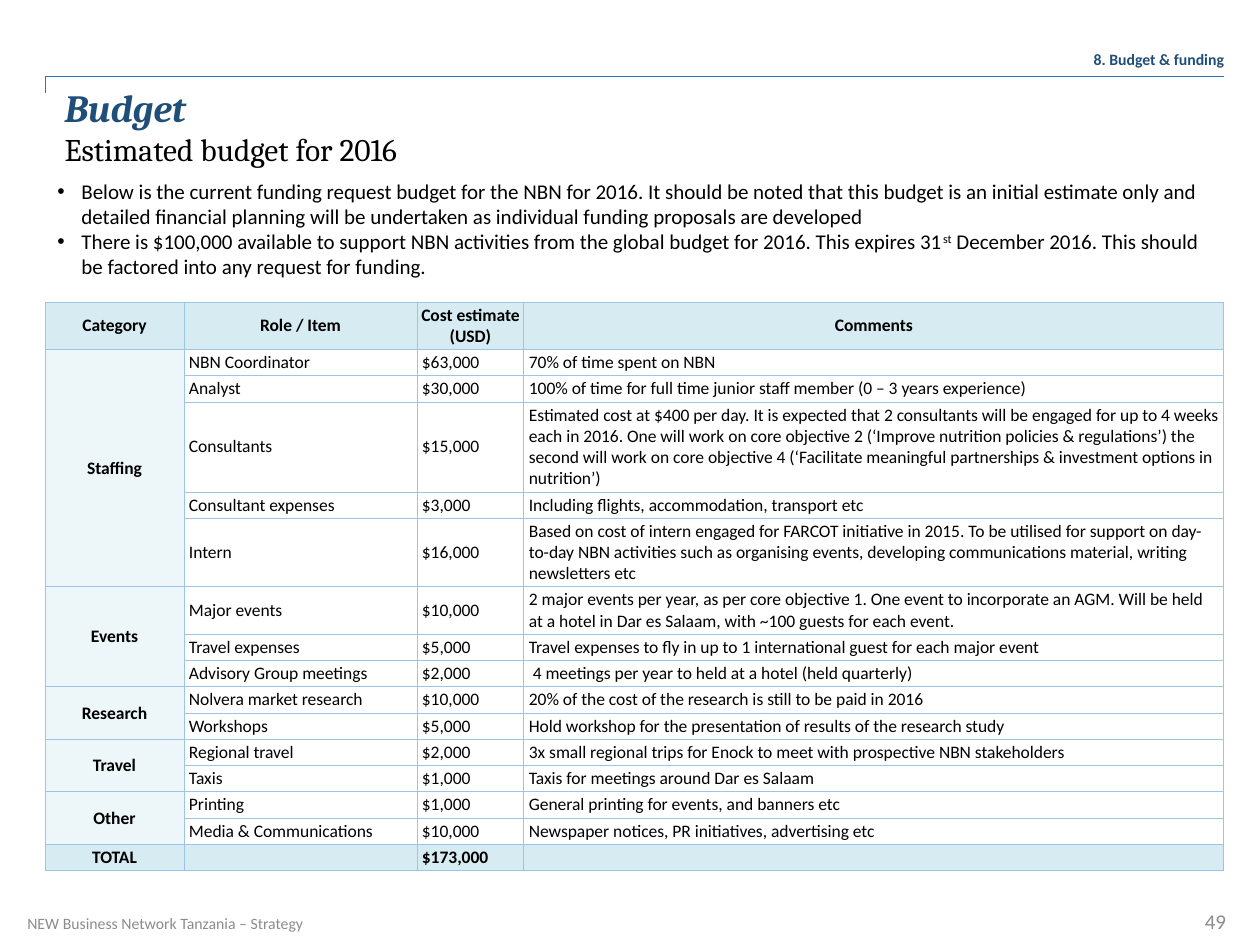
from lxml import etree
from pptx import Presentation
from pptx import util as u
from pptx.dml.color import RGBColor
from pptx.enum import shapes, text
from pptx.oxml import ns

PX = 914400 / 126
NAVY = RGBColor(0x1F, 0x4E, 0x79)
BLUE = RGBColor(0x2E, 0x75, 0xB6)
GREY = RGBColor(0x8C, 0x8C, 0x8C)
BLACK = RGBColor(0, 0, 0)
WHITE = RGBColor(255, 255, 255)
HEADER_FILL = RGBColor(0xD6, 0xEB, 0xF2)
CATEGORY_FILL = RGBColor(0xED, 0xF6, 0xF9)
BORDER = RGBColor(0x9D, 0xC3, 0xE6)
LEFT, CENTER, RIGHT = text.PP_ALIGN.LEFT, text.PP_ALIGN.CENTER, text.PP_ALIGN.RIGHT


def px(*lengths):
    """Turn pixel lengths into EMU."""
    return [u.Emu(round(length * PX)) for length in lengths]


def style(paragraph, size, color, bold=False, italic=False, name="Calibri", align=LEFT):
    paragraph.alignment = align
    font = paragraph.font
    font.name, font.size, font.bold, font.italic = name, u.Pt(size), bold, italic
    font.color.rgb = color


presentation = Presentation()
presentation.slide_width, presentation.slide_height = px(1260, 945)
slide = presentation.slides.add_slide(presentation.slide_layouts[5])

# Title and subtitle
title = slide.shapes.title
title.left, title.top, title.width, title.height = px(52, 78, 1179, 117)
frame = title.text_frame
frame.vertical_anchor = text.MSO_ANCHOR.TOP
frame.auto_size = text.MSO_AUTO_SIZE.NONE
frame.text = "Budget\nEstimated budget for 2016"
style(frame.paragraphs[0], 22, NAVY, True, True, "Cambria")
style(frame.paragraphs[1], 18, BLACK, name="Cambria")

# Footer, page number and section label
for label, box, size, color, bold, align, right_inset in [
    ("NEW Business Network Tanzania – Strategy", (15, 898, 426, 50), 9, GREY, False, LEFT, 13),
    ("49", (955, 896, 284, 50), 12, GREY, False, RIGHT, 13),
    ("8. Budget & funding", (921, 34, 303, 50), 9, NAVY, True, RIGHT, 0),
]:
    frame = slide.shapes.add_textbox(*px(*box)).text_frame
    frame.word_wrap = True
    frame.vertical_anchor = text.MSO_ANCHOR.MIDDLE
    frame.margin_right = px(right_inset)[0]
    frame.text = label
    style(frame.paragraphs[0], size, color, bold, align=align)

# Introductory bullets, each a list of (wording, is superscript)
bullets = [
    [("Below is the current funding request budget for the NBN for 2016. It should be noted that "
      "this budget is an initial estimate only and detailed financial planning will be undertaken "
      "as individual funding proposals are developed", False)],
    [("There is $100,000 available to support NBN activities from the global budget for 2016. "
      "This expires 31", False),
     ("st", True),
     (" December 2016. This should be factored into any request for funding.", False)],
]
frame = slide.shapes.add_textbox(*px(45, 172, 1179, 106)).text_frame
frame.word_wrap = True
for index, pieces in enumerate(bullets):
    paragraph = frame.add_paragraph() if index else frame.paragraphs[0]
    for wording, superscript in pieces:
        run = paragraph.add_run()
        run.text = wording
        if superscript:
            run._r.get_or_add_rPr().set("baseline", "30000")
    properties = paragraph._p.get_or_add_pPr()
    indent = px(24)[0]
    properties.set("marL", str(indent))
    properties.set("indent", str(-indent))
    etree.SubElement(properties, ns.qn("a:buFont")).set("typeface", "Arial")
    etree.SubElement(properties, ns.qn("a:buChar")).set("char", "•")
    style(paragraph, 12, BLACK)

# Budget table: category, then (item, cost, comment, lines of text)
budget = [
    ("Staffing", [
        ("NBN Coordinator", "$63,000", "70% of time spent on NBN", 1),
        ("Analyst", "$30,000",
         "100% of time for full time junior staff member (0 – 3 years experience)", 1),
        ("Consultants", "$15,000",
         "Estimated cost at $400 per day. It is expected that 2 consultants will be engaged for up "
         "to 4 weeks each in 2016. One will work on core objective 2 (‘Improve nutrition policies "
         "& regulations’) the second will work on core objective 4 (‘Facilitate meaningful "
         "partnerships & investment options in nutrition’)", 4),
        ("Consultant expenses", "$3,000", "Including flights, accommodation, transport etc", 1),
        ("Intern", "$16,000",
         "Based on cost of intern engaged for FARCOT initiative in 2015. To be utilised for "
         "support on day-to-day NBN activities such as organising events, developing "
         "communications material, writing newsletters etc", 3),
    ]),
    ("Events", [
        ("Major events", "$10,000",
         "2 major events per year, as per core objective 1. One event to incorporate an AGM. Will "
         "be held at a hotel in Dar es Salaam, with ~100 guests for each event.", 2),
        ("Travel expenses", "$5,000",
         "Travel expenses to fly in up to 1 international guest for each major event", 1),
        ("Advisory Group meetings", "$2,000",
         " 4 meetings per year to held at a hotel (held quarterly)", 1),
    ]),
    ("Research", [
        ("Nolvera market research", "$10,000",
         "20% of the cost of the research is still to be paid in 2016", 1),
        ("Workshops", "$5,000",
         "Hold workshop for the presentation of results of the research study", 1),
    ]),
    ("Travel", [
        ("Regional travel", "$2,000",
         "3x small regional trips for Enock to meet with prospective NBN stakeholders", 1),
        ("Taxis", "$1,000", "Taxis for meetings around Dar es Salaam", 1),
    ]),
    ("Other", [
        ("Printing", "$1,000", "General printing for events, and banners etc", 1),
        ("Media & Communications", "$10,000",
         "Newspaper notices, PR initiatives, advertising etc", 1),
    ]),
]
rows = [("Category", "Role / Item", "Cost estimate (USD)", "Comments", 2)]
spans = []
for category, items in budget:
    spans.append((len(rows), len(rows) + len(items) - 1))
    for index, item in enumerate(items):
        rows.append(("" if index else category, *item))
rows.append(("TOTAL", "", "$173,000", "", 1))
heights = [5 + 21.25 * row[-1] for row in rows]

table = slide.shapes.add_table(len(rows), 4, *px(45, 302, 1179, sum(heights))).table
table.horz_banding = False
for column, width in zip(table.columns, px(139, 233, 107, 700)):
    column.width = width
for row, height in zip(table.rows, px(*heights)):
    row.height = height

for row_index, row in enumerate(rows):
    emphasized = row_index in (0, len(rows) - 1)
    for column_index, wording in enumerate(row[:4]):
        centered = row_index == 0 or column_index == 0
        cell = table.cell(row_index, column_index)
        cell.text = wording
        cell.vertical_anchor = text.MSO_ANCHOR.MIDDLE
        cell.margin_left = cell.margin_right = px(2 if centered else 5)[0]
        cell.margin_top = cell.margin_bottom = px(2)[0]
        paragraph = cell.text_frame.paragraphs[0]
        style(paragraph, 10, BLACK, emphasized or centered, align=CENTER if centered else LEFT)
        if not wording:  # keeps empty cells from stretching their row
            etree.SubElement(paragraph._p, ns.qn("a:endParaRPr")).set("sz", "1000")
        properties = cell._tc.get_or_add_tcPr()
        for side in ("lnL", "lnR", "lnT", "lnB"):
            line = etree.SubElement(properties, ns.qn(f"a:{side}"), w=str(u.Pt(0.5)))
            fill = etree.SubElement(line, ns.qn("a:solidFill"))
            etree.SubElement(fill, ns.qn("a:srgbClr"), val=str(BORDER))
        cell.fill.solid()
        cell.fill.fore_color.rgb = (
            HEADER_FILL if emphasized else CATEGORY_FILL if centered else WHITE)
for first, last in spans:
    table.cell(first, 0).merge(table.cell(last, 0))

# Header rule with its short drop at the left
rule = slide.shapes.add_connector(shapes.MSO_CONNECTOR.ELBOW, *px(45, 93, 1224, 76))
rule.line.color.rgb = BLUE
rule.line.width = u.Pt(0.5)
properties = rule._element.spPr
etree.SubElement(properties, ns.qn("a:effectLst"))
adjustments = properties.find(ns.qn("a:prstGeom")).find(ns.qn("a:avLst"))
etree.SubElement(adjustments, ns.qn("a:gd"), name="adj1", fmla="val 0")

presentation.save("out.pptx")
